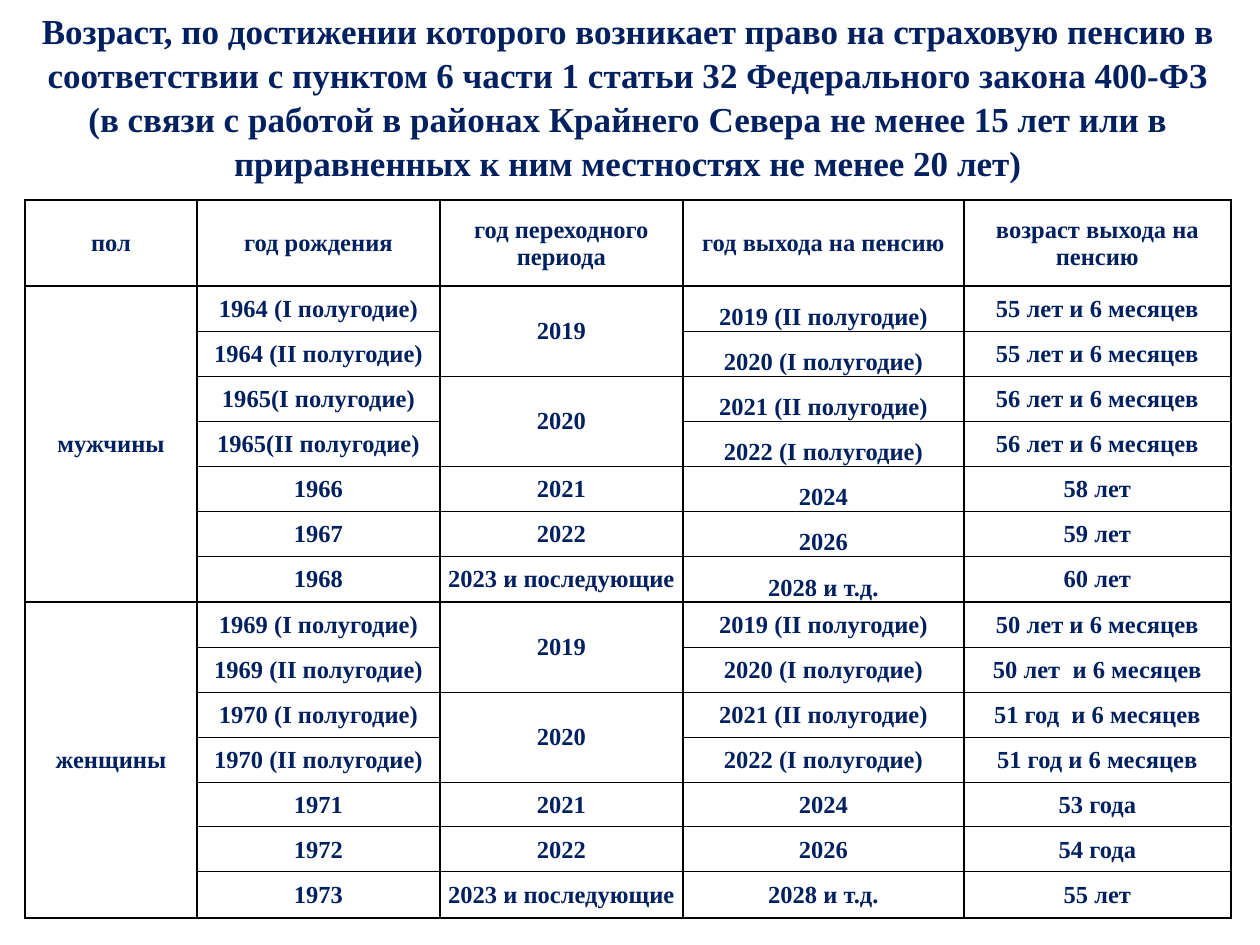
from dataclasses import dataclass

from lxml.etree import SubElement
from pptx import Presentation
from pptx.dml.color import RGBColor
from pptx.enum.text import MSO_ANCHOR, PP_ALIGN
from pptx.oxml.ns import qn
from pptx.util import Emu, Pt

EMU_PER_PX = 914400 / 126
FONT = "Times New Roman"
NAVY, BLACK, WHITE = "002060", "000000", "FFFFFF"
LEFT, WIDTH = 25, 1206
TABLE_TOP = 200
COLUMN_WIDTHS = [172, 243, 243, 281, 267]
HEADER_HEIGHT = 86
GROUP_HEIGHTS = [45] * 6 + [46]
GROUP_SIZE = len(GROUP_HEIGHTS)
THICK, THIN = 1, 0.5

TITLE = (
    "Возраст, по достижении которого возникает право на страховую пенсию в "
    "соответствии с пунктом 6 части 1 статьи 32 Федерального закона 400-ФЗ "
    "(в связи с работой в районах Крайнего Севера не менее 15 лет или в "
    "приравненных к ним местностях не менее 20 лет)"
)
HEADERS = ["пол", "год рождения", "год переходного периода",
           "год выхода на пенсию", "возраст выхода на пенсию"]
TRANSITION_YEARS = [("2019", 2), ("2020", 2), ("2021", 1), ("2022", 1),
                    ("2023 и последующие", 1)]
RETIREMENT_YEARS = ["2019 (II полугодие)", "2020 (I полугодие)",
                    "2021 (II полугодие)", "2022 (I полугодие)",
                    "2024", "2026", "2028 и т.д."]


@dataclass(frozen=True)
class Group:
    """Pension schedule of one sex."""

    name: str
    births: list[str]
    ages: list[str]
    retirement_anchor: MSO_ANCHOR


GROUPS = [
    Group("мужчины",
          ["1964 (I полугодие)", "1964 (II полугодие)", "1965(I полугодие)",
           "1965(II полугодие)", "1966", "1967", "1968"],
          ["55 лет и 6 месяцев", "55 лет и 6 месяцев", "56 лет и 6 месяцев",
           "56 лет и 6 месяцев", "58 лет", "59 лет", "60 лет"],
          MSO_ANCHOR.BOTTOM),
    Group("женщины",
          ["1969 (I полугодие)", "1969 (II полугодие)", "1970 (I полугодие)",
           "1970 (II полугодие)", "1971", "1972", "1973"],
          ["50 лет и 6 месяцев", "50 лет  и 6 месяцев", "51 год  и 6 месяцев",
           "51 год и 6 месяцев", "53 года", "54 года", "55 лет"],
          MSO_ANCHOR.MIDDLE),
]


def px(length: int) -> Emu:
    """Turn pixels into EMU."""
    return Emu(round(length * EMU_PER_PX))


def color(value: str) -> RGBColor:
    """Turn a hex string into a colour."""
    return RGBColor.from_string(value)


def write(text_frame, text: str, size: int):
    """Write one centred bold paragraph and return it."""
    text_frame.text = text
    paragraph = text_frame.paragraphs[0]
    paragraph.alignment = PP_ALIGN.CENTER
    font = paragraph.runs[0].font
    font.name, font.size, font.bold = FONT, Pt(size), True
    font.color.rgb = color(NAVY)
    return paragraph


def add_border(cell, side: str, width: float) -> None:
    """Add a black border to one side of a cell."""
    properties = cell._tc.get_or_add_tcPr()
    line = SubElement(properties, qn(f"a:ln{side}"), w=str(Pt(width)))
    fill = SubElement(line, qn("a:solidFill"))
    SubElement(fill, qn("a:srgbClr"), val=BLACK)


def fill_cell(table, row: int, column: int, text: str, span: int = 1,
              top: float = THICK, bottom: float = THICK,
              anchor: MSO_ANCHOR = MSO_ANCHOR.MIDDLE) -> None:
    """Fill a cell that spans one or more rows."""
    cell = table.cell(row, column)
    if span > 1:
        cell.merge(table.cell(row + span - 1, column))
    for side, width in zip("LRTB", (THICK, THICK, top, bottom)):
        add_border(cell, side, width)
    cell.fill.solid()
    cell.fill.fore_color.rgb = color(WHITE)
    cell.margin_left = cell.margin_right = cell.margin_top = px(1)
    cell.margin_bottom = 0
    cell.vertical_anchor = anchor
    write(cell.text_frame, text, 14)


def fill_group(table, first_row: int, group: Group) -> None:
    """Fill the rows of one group."""
    fill_cell(table, first_row, 0, group.name, GROUP_SIZE)
    columns = [
        (1, [(text, 1) for text in group.births], MSO_ANCHOR.MIDDLE),
        (2, TRANSITION_YEARS, MSO_ANCHOR.MIDDLE),
        (3, [(text, 1) for text in RETIREMENT_YEARS], group.retirement_anchor),
        (4, [(text, 1) for text in group.ages], MSO_ANCHOR.MIDDLE),
    ]
    for column, entries, anchor in columns:
        offset = 0
        for text, span in entries:
            top = THICK if offset == 0 else THIN
            bottom = THICK if offset + span == GROUP_SIZE else THIN
            fill_cell(table, first_row + offset, column, text, span,
                      top, bottom, anchor)
            offset += span


def add_title(slide) -> None:
    """Add the slide title."""
    text_frame = slide.shapes.add_textbox(
        px(LEFT), px(0), px(WIDTH), px(185)).text_frame
    text_frame.word_wrap = True
    text_frame.margin_top, text_frame.margin_bottom = px(7), 0
    write(text_frame, TITLE, 20).line_spacing = 1.05


def add_schedule(slide) -> None:
    """Add the pension age table."""
    heights = [HEADER_HEIGHT] + GROUP_HEIGHTS * len(GROUPS)
    table = slide.shapes.add_table(
        len(heights), len(COLUMN_WIDTHS), px(LEFT), px(TABLE_TOP),
        px(WIDTH), px(sum(heights))).table
    table.first_row = table.horz_banding = False
    for column, width in zip(table.columns, COLUMN_WIDTHS):
        column.width = px(width)
    for row, height in zip(table.rows, heights):
        row.height = px(height)
    for column, text in enumerate(HEADERS):
        fill_cell(table, 0, column, text)
    for index, group in enumerate(GROUPS):
        fill_group(table, 1 + index * GROUP_SIZE, group)


def main() -> None:
    """Build and save the presentation."""
    presentation = Presentation()
    presentation.slide_width, presentation.slide_height = px(1260), px(945)
    slide = presentation.slides.add_slide(presentation.slide_layouts[6])
    add_title(slide)
    add_schedule(slide)
    presentation.save("out.pptx")


if __name__ == "__main__":
    main()
